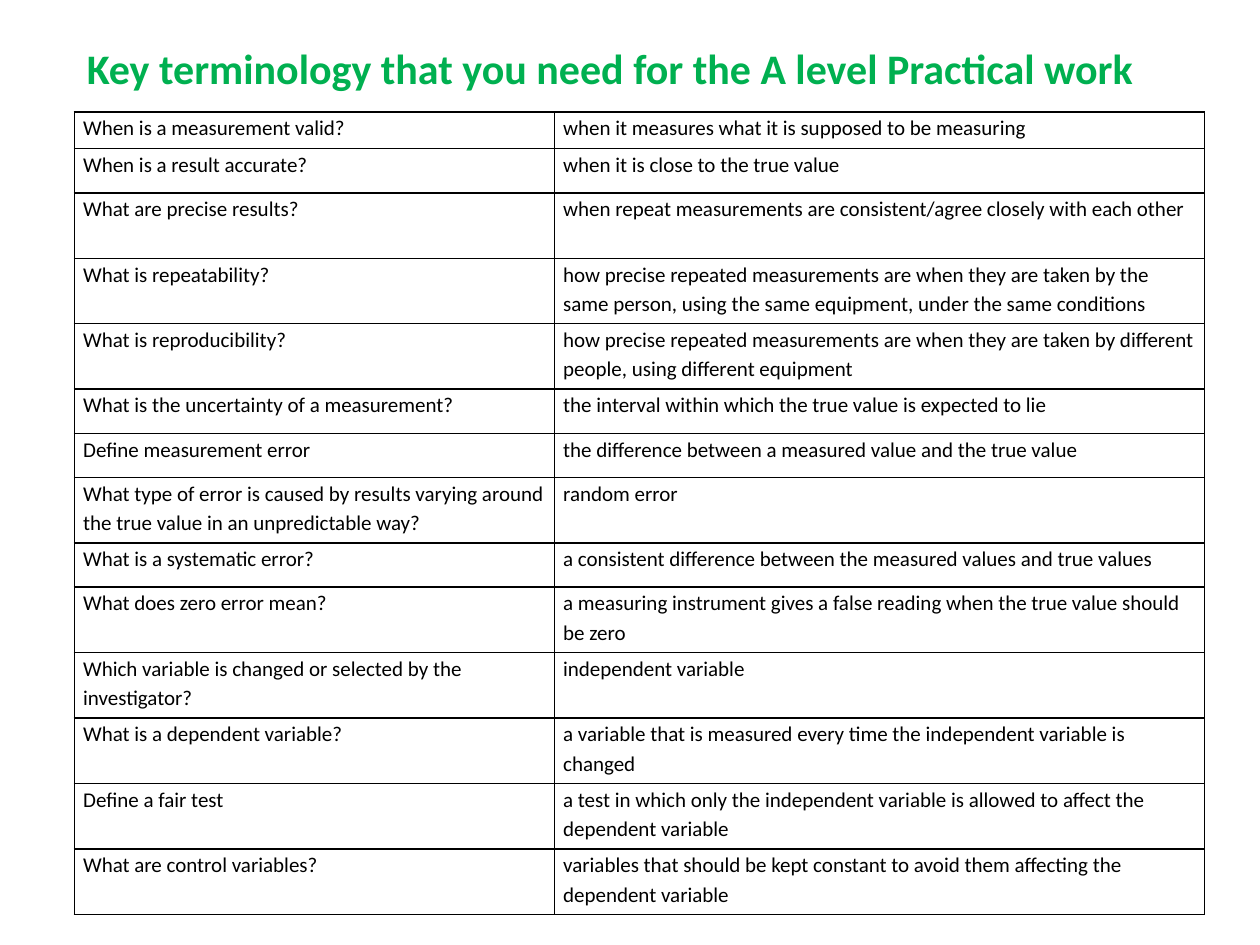
from typing import NamedTuple

from lxml import etree
from pptx import Presentation
from pptx.dml.color import RGBColor
from pptx.oxml.ns import qn
from pptx.util import Inches, Pt

COLORS = {"title": "00B050", "text": "000000", "border": "000000", "cell": "FFFFFF"}
FONT = "Calibri"
COL_WIDTHS = (3.81, 5.16)
FIRST, SINGLE, DOUBLE = 0.29, 0.35, 0.52  # row heights


class Term(NamedTuple):
    question: str
    answer: str
    height: float = DOUBLE


TERMS = [
    Term("When is a measurement valid?",
         "when it measures what it is supposed to be measuring", FIRST),
    Term("When is a result accurate?", "when it is close to the true value", SINGLE),
    Term("What are precise results?",
         "when repeat measurements are consistent/agree closely with each other"),
    Term("What is repeatability?",
         "how precise repeated measurements are when they are taken by the same person, "
         "using the same equipment, under the same conditions"),
    Term("What is reproducibility?",
         "how precise repeated measurements are when they are taken by different people, "
         "using different equipment"),
    Term("What is the uncertainty of a measurement?",
         "the interval within which the true value is expected to lie", SINGLE),
    Term("Define measurement error",
         "the difference between a measured value and the true value", SINGLE),
    Term("What type of error is caused by results varying around the true value "
         "in an unpredictable way?", "random error"),
    Term("What is a systematic error?",
         "a consistent difference between the measured values and true values", SINGLE),
    Term("What does zero error mean?",
         "a measuring instrument gives a false reading when the true value should be zero"),
    Term("Which variable is changed or selected by the investigator?",
         "independent variable"),
    Term("What is a dependent variable?",
         "a variable that is measured every time the independent variable is changed"),
    Term("Define a fair test",
         "a test in which only the independent variable is allowed to affect "
         "the dependent variable"),
    Term("What are control variables?",
         "variables that should be kept constant to avoid them affecting "
         "the dependent variable"),
]


def set_font(p, size: float, color: str, bold: bool = False) -> None:
    p.font.name = FONT
    p.font.size = Pt(size)
    p.font.bold = bold
    p.font.color.rgb = RGBColor.from_string(COLORS[color])


def add_borders(cell) -> None:
    tc_pr = cell._tc.get_or_add_tcPr()
    for side in ("a:lnL", "a:lnR", "a:lnT", "a:lnB"):
        ln = etree.SubElement(tc_pr, qn(side), w=str(Pt(1)))
        fill = etree.SubElement(ln, qn("a:solidFill"))
        etree.SubElement(fill, qn("a:srgbClr"), val=COLORS["border"])


def fill_cell(cell, text: str) -> None:
    add_borders(cell)
    cell.fill.solid()
    cell.fill.fore_color.rgb = RGBColor.from_string(COLORS["cell"])
    cell.margin_left = cell.margin_right = Inches(0.07)
    cell.margin_top = cell.margin_bottom = 0
    p = cell.text_frame.paragraphs[0]
    p.text = text
    p.line_spacing = 1.15
    set_font(p, 12, "text")


def add_terms(s, terms: list[Term]) -> None:
    height = sum(term.height for term in terms)
    table = s.shapes.add_table(
        len(terms), len(COL_WIDTHS), Inches(0.59), Inches(0.89),
        Inches(sum(COL_WIDTHS)), Inches(height)).table
    table.first_row = table.horz_banding = False
    for col, width in zip(table.columns, COL_WIDTHS):
        col.width = Inches(width)
    for row, term in zip(table.rows, terms):
        row.height = Inches(term.height)
        for cell, text in zip(row.cells, (term.question, term.answer)):
            fill_cell(cell, text)


def add_title(s, text: str) -> None:
    sp = s.shapes.add_textbox(Inches(0.59), Inches(0.29), Inches(8.82), Inches(0.5))
    tf = sp.text_frame
    tf.word_wrap = True
    p = tf.paragraphs[0]
    p.text = text
    set_font(p, 24, "title", bold=True)


def main() -> None:
    prs = Presentation()
    prs.slide_width, prs.slide_height = Inches(10), Inches(7.5)
    s = prs.slides.add_slide(prs.slide_layouts[6])

    # Question and answer table
    add_terms(s, TERMS)

    # Heading
    add_title(s, "Key terminology that you need for the A level Practical work")

    prs.save("out.pptx")


if __name__ == "__main__":
    main()
